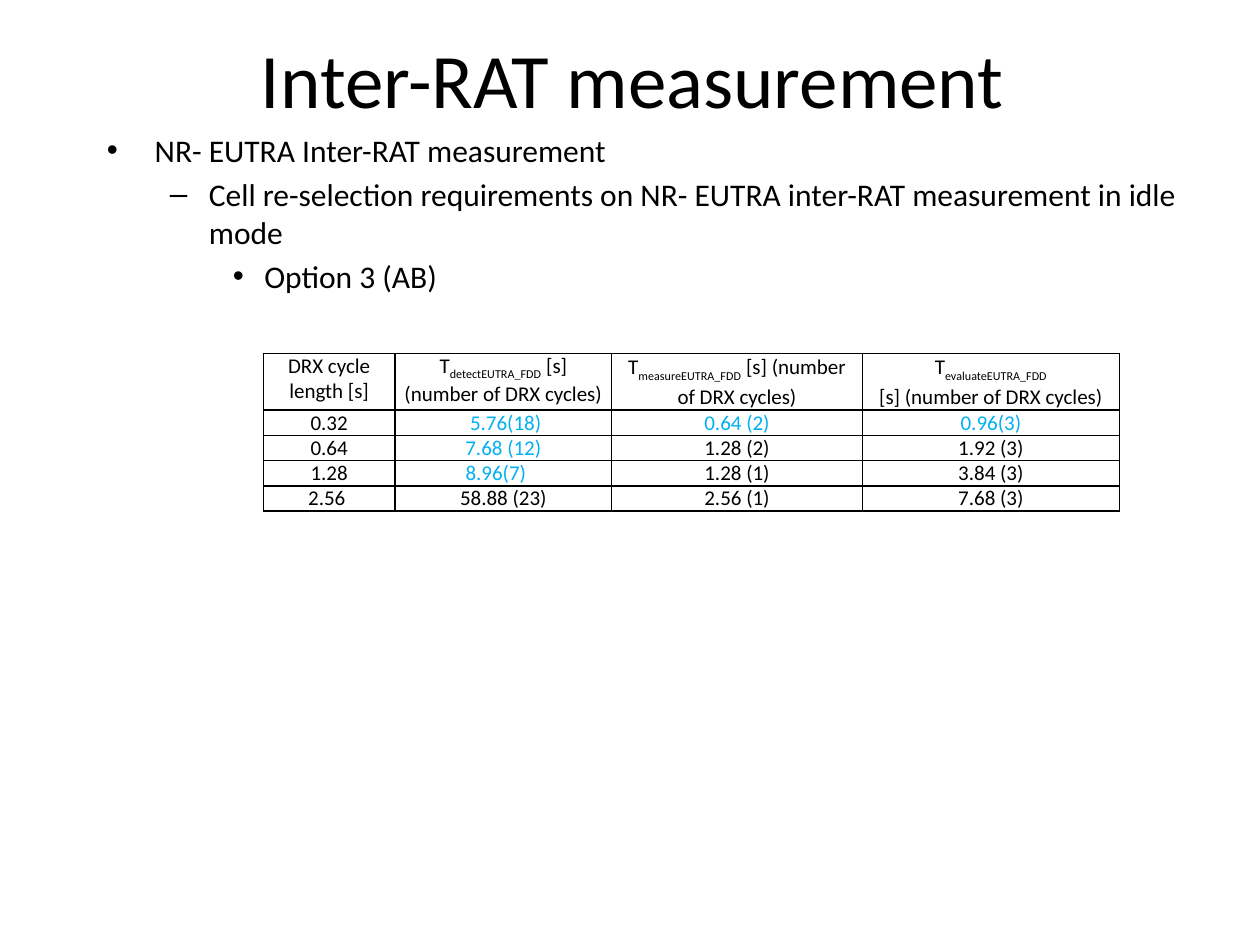
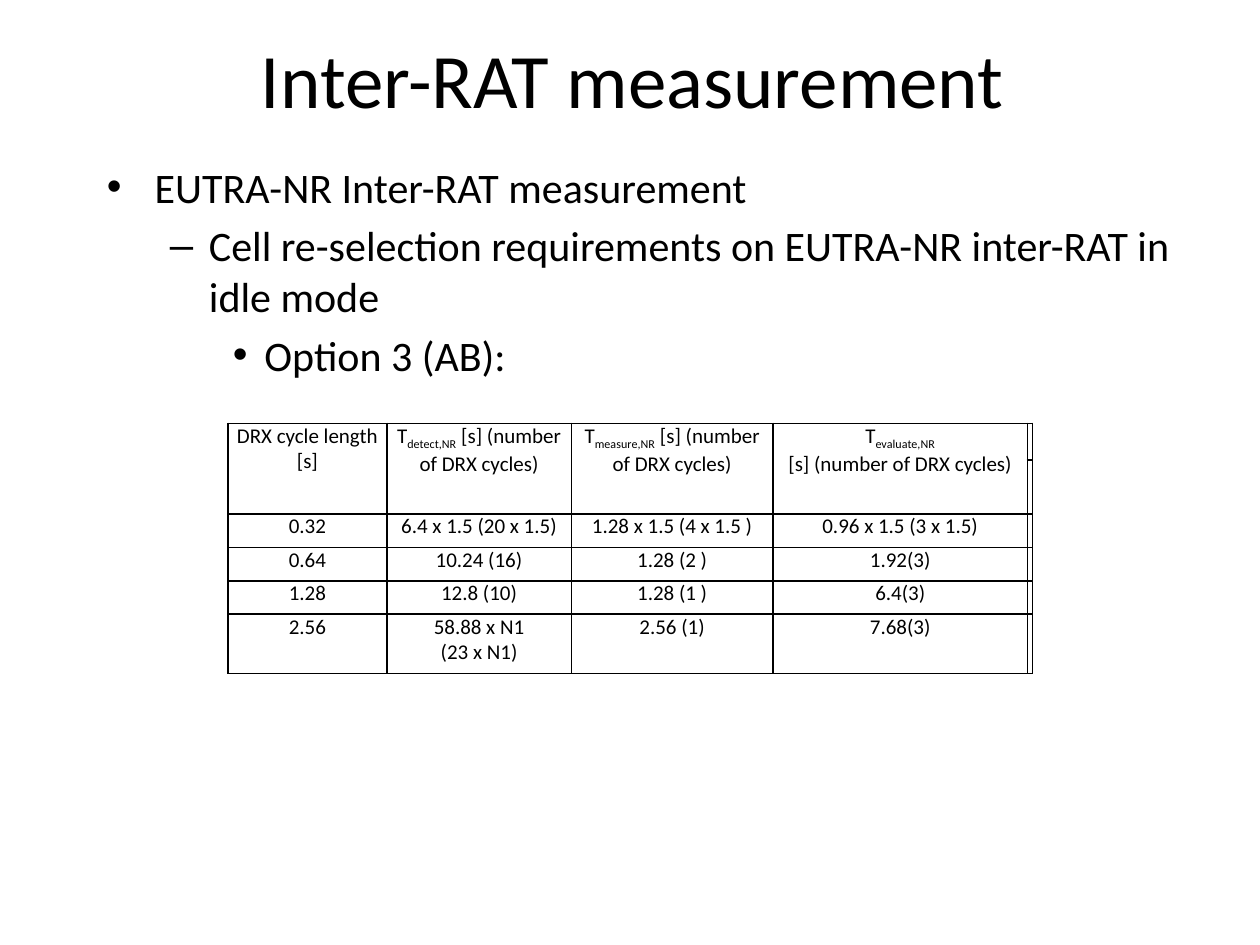
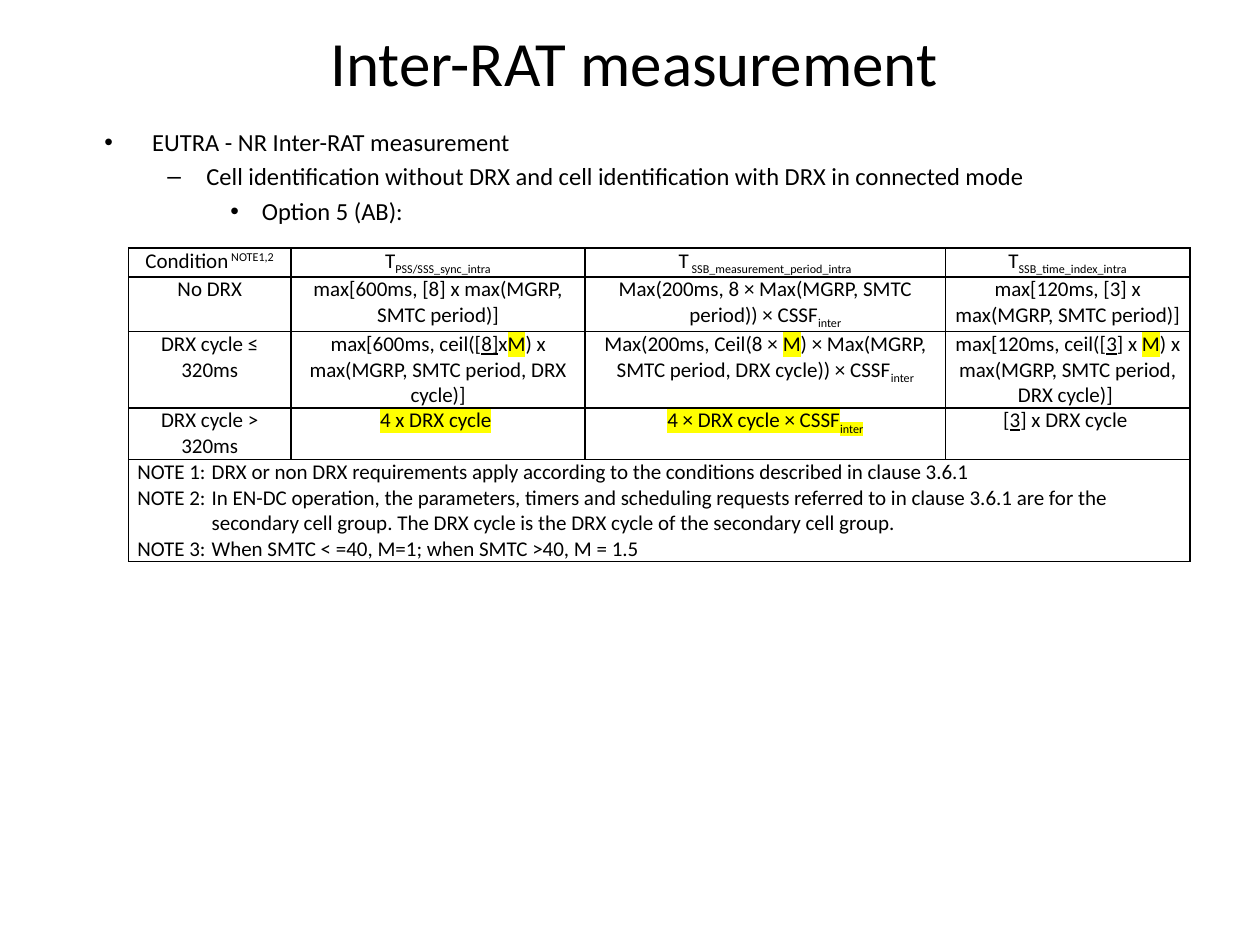
from dataclasses import dataclass
from lxml.etree import SubElement
from pptx import Presentation
from pptx.dml.color import RGBColor
from pptx.enum.text import MSO_ANCHOR, PP_ALIGN
from pptx.oxml.ns import qn
from pptx.util import Emu, Inches, Pt


@dataclass(frozen=True)
class Theme:
    font: str = "Calibri"
    ink: str = "000000"
    accent: str = "00B0F0"
    marker: str = "FFFF00"
    table_size: int = 12
    border: int = 12700
    bullets: tuple = (("•", 3.8, -3.8), ("–", 8.1, -3.1), ("•", 12.5, -2.5))


theme = Theme()
presentation = Presentation()
presentation.slide_width = Inches(10)
presentation.slide_height = Inches(7.5)
grid = presentation.slide_width / 100


def span(steps):
    return Emu(round(steps * grid))


def write(frame, lines, size, **settings):
    for index, line in enumerate(lines):
        paragraph = frame.add_paragraph() if index else frame.paragraphs[0]
        for name, value in settings.items():
            setattr(paragraph, name, value)
        for piece in filter(None, line.split("|")):
            styles, _, text = piece.rpartition("~")
            run = paragraph.add_run()
            run.text = text
            run.font.size = Pt(size)
            run.font.color.rgb = RGBColor.from_string(theme.accent if "accent" in styles else theme.ink)
            run.font.name = theme.font
            properties = run._r.get_or_add_rPr()
            if "under" in styles:
                run.font.underline = True
            for style, baseline in (("sub", "-25000"), ("sup", "30000")):
                if style in styles:
                    properties.set("baseline", baseline)
            if "mark" in styles:
                highlight = SubElement(properties, qn("a:highlight"))
                SubElement(highlight, qn("a:srgbClr"), val=theme.marker)
                properties.find(qn("a:latin")).addprevious(highlight)
        if not line:
            SubElement(paragraph._p, qn("a:endParaRPr"), sz=str(size * 100))


pages = [
    {
        "title_size": 44, "title_height": 12.5,
        "body_at": (7.5, 9.9, 90, 27.6), "body_size": 18,
        "body": [
            "NR- EUTRA Inter-RAT measurement",
            "Cell re-selection requirements on NR- EUTRA inter-RAT measurement in idle mode",
            "Option 3 (AB)",
        ],
        "table_at": (20.9, 28.05),
        "columns": (10.45, 17.2, 19.9, 20.4),
        "rows": (4.5, 2, 2, 2, 2),
        "cells": [
            ["DRX cycle length [s]",
             "T|sub~detectEUTRA_FDD| [s] (number of DRX cycles)",
             "T|sub~measureEUTRA_FDD| [s] (number of DRX cycles)",
             "T|sub~evaluateEUTRA_FDD\n[s] (number of DRX cycles)"],
            ["0.32", "accent~ 5.76(18)", "accent~0.64 (2)", "accent~0.96(3)"],
            ["0.64", "accent~7.68 (12)", "1.28 (2)", "1.92 (3)"],
            ["1.28", "accent~8.96(7)", "1.28 (1)", "3.84 (3)"],
            ["2.56 ", "58.88 (23)", "2.56 (1)", "7.68 (3)"],
        ],
        "merges": [],
        "paragraph_formats": {(0, 2): {"line_spacing": 1.05}, (0, 3): {"line_spacing": 1.05}},
        "cell_formats": {(3, 1): {"margin_right": span(1.9)}},
    },
    {
        "title_size": 44, "title_height": 12.5,
        "body_at": (7.5, 12.3, 90, 55.1), "body_size": 24,
        "body": [
            "EUTRA-NR Inter-RAT measurement",
            "Cell re-selection requirements on EUTRA-NR inter-RAT in idle mode",
            "Option 3 (AB):",
        ],
        "table_at": (18.1, 33.6),
        "columns": (12.6, 14.65, 16, 20.2, 0.35),
        "rows": (2.9, 4.3, 2.65, 2.65, 2.65, 4.7),
        "cells": [
            ["DRX cycle length [s]",
             "T|sub~detect,NR| [s] (number of DRX cycles)",
             "T|sub~measure,NR| [s] (number of DRX cycles)",
             "T|sub~evaluate,NR\n[s] (number of DRX cycles)", ""],
            [""] * 5,
            ["0.32", "6.4 x 1.5 (20 x 1.5)", "1.28 x 1.5 (4 x 1.5 )", "0.96 x 1.5 (3 x 1.5)", ""],
            ["0.64", "10.24 (16)", "1.28 (2 )", "1.92(3)", ""],
            ["1.28", "12.8 (10)", "1.28 (1 )", "6.4(3)", ""],
            ["2.56", "58.88 x N1\n(23 x N1)", "2.56 (1)", "7.68(3)", ""],
        ],
        "merges": [(0, column, 1, column) for column in range(4)],
        "paragraph_formats": {},
        "cell_formats": {(row, 4): {"margin_left": 0, "margin_right": 0} for row in range(6)},
    },
    {
        "title_size": 36, "title_height": 10,
        "body_at": (7.3, 9.6, 90, 11.8), "body_size": 14,
        "body": [
            "EUTRA - NR Inter-RAT measurement",
            "Cell identification without DRX and cell identification with DRX in connected mode",
            "Option 5 (AB):",
        ],
        "table_at": (10.2, 19.7),
        "columns": (12.9, 23.35, 28.6, 19.4),
        "rows": (2.2, 4.35, 6.05, 4.1, 8.1),
        "cells": [
            ["Condition|sup~ NOTE1,2", "T|sub~PSS/SSS_sync_intra",
             "T|sub~ SSB_measurement_period_intra", "T|sub~SSB_time_index_intra"],
            ["No DRX", "max[600ms, [8] x max(MGRP, SMTC period)]",
             "Max(200ms, 8 × Max(MGRP, SMTC period)) × CSSF|sub~inter",
             "max[120ms, [3] x max(MGRP, SMTC period)] "],
            ["DRX cycle ≤ 320ms",
             "max[600ms, ceil([|under~8]|x|mark~M|) x max(MGRP, SMTC period, DRX cycle)]",
             "Max(200ms, Ceil(8 × |mark~M|) × Max(MGRP, SMTC period, DRX cycle)) × CSSF|sub~inter",
             "max[120ms, ceil([|under~3|] x |mark~M|) x max(MGRP, SMTC period, DRX cycle)] "],
            ["DRX cycle > 320ms", "mark~4 x DRX cycle| ",
             "mark~4 × DRX cycle × CSSF|mark sub~inter", "[|under~3|] x DRX cycle "],
            ["NOTE 1: \tDRX or non DRX requirements apply according to the conditions "
             "described in clause 3.6.1\n"
             "NOTE 2: \tIn EN-DC operation, the parameters, timers and scheduling requests "
             "referred to in clause 3.6.1 are for the secondary cell group. "
             "The DRX cycle is the DRX cycle of the secondary cell group.\n"
             "NOTE 3:\tWhen SMTC < =40, M=1; when SMTC >40, M = 1.5", "", "", ""],
        ],
        "merges": [(4, 0, 4, 3)],
        "paragraph_formats": {(4, 0): {"alignment": PP_ALIGN.LEFT}},
        "cell_formats": {},
    },
]

for page in pages:
    slide = presentation.slides.add_slide(presentation.slide_layouts[6])

    title = slide.shapes.add_textbox(span(5.9), span(-0.1), span(90), span(page["title_height"])).text_frame
    title.word_wrap = True
    title.vertical_anchor = MSO_ANCHOR.MIDDLE
    write(title, ["Inter-RAT measurement "], page["title_size"], alignment=PP_ALIGN.CENTER)

    body = slide.shapes.add_textbox(*map(span, page["body_at"])).text_frame
    body.word_wrap = True
    write(body, page["body"], page["body_size"], space_before=Pt(page["body_size"] * 0.2))
    for level, (symbol, margin, indent) in enumerate(theme.bullets):
        paragraph = body.paragraphs[level]
        paragraph.level = level
        properties = paragraph._p.get_or_add_pPr()
        properties.set("marL", str(span(margin)))
        properties.set("indent", str(span(indent)))
        SubElement(properties, qn("a:buFont"), typeface="Arial")
        SubElement(properties, qn("a:buChar"), char=symbol)

    columns, rows = page["columns"], page["rows"]
    left, top = page["table_at"]
    table = slide.shapes.add_table(
        len(rows), len(columns), span(left), span(top), span(sum(columns)), span(sum(rows))
    ).table
    table.first_row = False
    table.horz_banding = False
    for column, width in zip(table.columns, columns):
        column.width = span(width)
    for row, height in zip(table.rows, rows):
        row.height = span(height)

    for row_index, texts in enumerate(page["cells"]):
        for column_index, text in enumerate(texts):
            position = (row_index, column_index)
            cell = table.cell(*position)
            margins = {"margin_left": span(0.7), "margin_right": span(0.7), "margin_top": 0, "margin_bottom": 0}
            for name, value in {**margins, **page["cell_formats"].get(position, {})}.items():
                setattr(cell, name, value)
            formats = {"alignment": PP_ALIGN.CENTER, **page["paragraph_formats"].get(position, {})}
            write(cell.text_frame, text.split("\n"), theme.table_size, **formats)
            for paragraph in cell.text_frame.paragraphs:
                if "\t" in paragraph.text:
                    properties = paragraph._p.get_or_add_pPr()
                    properties.set("marL", str(span(5.9)))
                    properties.set("indent", str(span(-5.9)))
            properties = cell._tc.get_or_add_tcPr()
            for side in "LRTB":
                line = SubElement(properties, qn(f"a:ln{side}"), w=str(theme.border))
                fill = SubElement(line, qn("a:solidFill"))
                SubElement(fill, qn("a:srgbClr"), val=theme.ink)
            cell.fill.background()

    for first_row, first_column, last_row, last_column in page["merges"]:
        table.cell(first_row, first_column).merge(table.cell(last_row, last_column))

presentation.save("out.pptx")
